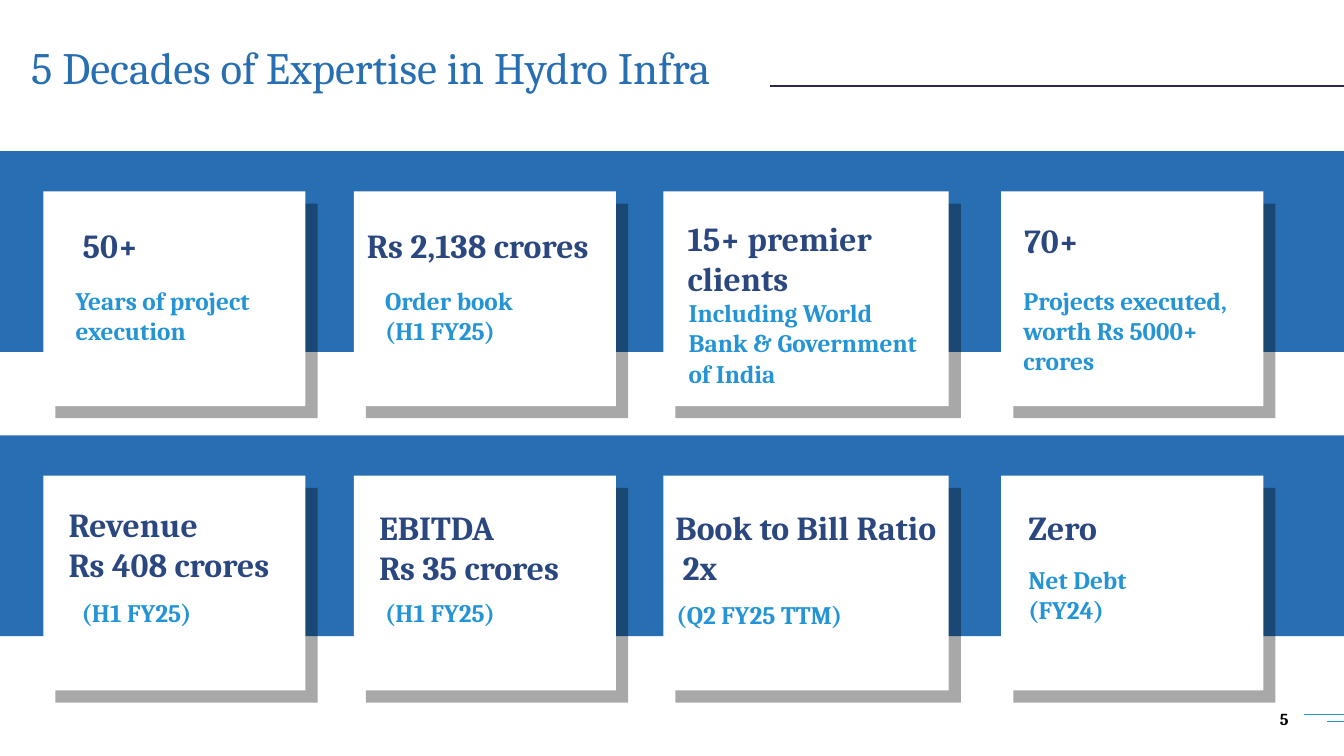
from lxml.etree import SubElement
from pptx import Presentation
from pptx.dml.color import RGBColor
from pptx.enum.shapes import MSO_CONNECTOR, MSO_SHAPE
from pptx.enum.text import MSO_ANCHOR, MSO_AUTO_SIZE, PP_ALIGN
from pptx.oxml.ns import qn
from pptx.util import Inches, Pt

COLORS = {"blue": "286EB2", "navy": "2B4780", "sky": "2494D5",
          "rule": "2C284B", "black": "000000", "white": "FFFFFF"}
FORMATS = {
    "title": {"size": Pt(32), "bold": False, "color": "blue"},
    "figure": {"size": Pt(24), "bold": True, "color": "navy"},
    "label": {"size": Pt(18), "bold": True, "color": "sky"},
    "number": {"size": Pt(12), "bold": True, "color": "black"},
}


def rgb(name):
    return RGBColor.from_string(COLORS[name])


class SlideBuilder:
    def __init__(self, slide, font="Cambria"):
        self.s = slide
        self.font = font

    def fill_text(self, tf, lines, style, align=PP_ALIGN.LEFT, inset=0):
        frame = {"word_wrap": True, "auto_size": MSO_AUTO_SIZE.NONE,
                 "margin_left": inset, "margin_right": inset,
                 "margin_top": 0, "margin_bottom": 0}
        for name, value in frame.items():
            setattr(tf, name, value)
        for i, line in enumerate(lines):
            p = tf.paragraphs[0] if i == 0 else tf.add_paragraph()
            p.alignment = align
            r = p.add_run()
            r.text = line
            r.font.name = self.font
            for name, value in FORMATS[style].items():
                if name == "color":
                    r.font.color.rgb = rgb(value)
                else:
                    setattr(r.font, name, value)

    def title(self, text, box):
        sp = self.s.shapes.title
        for name, value in zip(("left", "top", "width", "height"), box):
            setattr(sp, name, Inches(value))
        self.fill_text(sp.text_frame, [text], "title", inset=Inches(0.1))
        sp.text_frame.vertical_anchor = MSO_ANCHOR.MIDDLE
        sp.text_frame.paragraphs[0].line_spacing = 0.9

    def text(self, box, lines, style, **options):
        sp = self.s.shapes.add_textbox(*map(Inches, box))
        self.fill_text(sp.text_frame, lines, style, **options)
        return sp.text_frame

    def rect(self, box, color, alpha=None):
        sp = self.s.shapes.add_shape(MSO_SHAPE.RECTANGLE, *map(Inches, box))
        sp.shadow.inherit = False
        sp.fill.solid()
        sp.fill.fore_color.rgb = rgb(color)
        sp.line.fill.background()
        if alpha:
            clr = sp._element.spPr.find(".//" + qn("a:srgbClr"))
            SubElement(clr, qn("a:alpha"), val=str(alpha * 1000))

    def line(self, x1, x2, y, color, width):
        cn = self.s.shapes.add_connector(
            MSO_CONNECTOR.STRAIGHT, *map(Inches, (x1, y, x2, y)))
        cn.line.color.rgb = rgb(color)
        cn.line.width = Pt(width)
        SubElement(cn._element.spPr, qn("a:effectLst"))


WIDTH = 13.33
COLUMNS = [(0.43, 2.6), (3.51, 2.6), (6.58, 2.83), (9.93, 2.6)]
CARD_HEIGHT, SHADOW = 2.13, 0.12

# Each row: band top, then (figure box, figure lines, label box, label lines)
ROWS = [
    (1.5, [
        ((0.82, 2.23, 2.2, 0.4), ["50+"],
         (0.75, 2.83, 2.19, 0.61), ["Years of project execution"]),
        ((3.64, 2.23, 2.36, 0.4), ["Rs 2,138 crores"],
         (3.82, 2.83, 1.53, 0.62), ["Order book (H1 FY25)"]),
        ((6.82, 2.16, 2.56, 0.81), ["15+ premier clients"],
         (6.83, 2.95, 2.43, 0.91), ["Including World Bank & Government of India"]),
        ((10.16, 2.18, 2.3, 0.4), ["70+"],
         (10.15, 2.83, 2.16, 0.91), ["Projects executed, worth Rs 5000+ crores"]),
    ]),
    (4.32, [
        ((0.68, 5, 2.13, 0.81), ["Revenue", "Rs 408 crores"],
         (0.81, 5.93, 2.19, 0.3), ["(H1 FY25)"]),
        ((3.76, 5.03, 2.3, 0.81), ["EBITDA", "Rs 35 crores"],
         (3.82, 5.93, 1.87, 0.3), ["(H1 FY25)"]),
        ((6.7, 5.03, 2.67, 0.81), ["Book to Bill Ratio", "2x"],
         (6.71, 5.95, 1.87, 0.3), ["(Q2 FY25 TTM)"]),
        ((10.2, 5.03, 2.3, 0.4), ["Zero"],
         (10.2, 5.6, 1.96, 0.61), ["Net Debt", "(FY24)"]),
    ]),
]


def main():
    prs = Presentation()
    prs.slide_width, prs.slide_height = Inches(WIDTH), Inches(7.5)
    b = SlideBuilder(prs.slides.add_slide(prs.slide_layouts[5]))

    # Title and rule
    b.title("5 Decades of Expertise in Hydro Infra", (0.21, 0.42, 12.61, 0.55))
    b.line(7.64, WIDTH, 0.85, "rule", 1.5)

    # Bands with cards
    for band_top, cards in ROWS:
        b.rect((0, band_top, WIDTH, 1.99), "blue")
        top = band_top + 0.4
        for left, width in COLUMNS:
            b.rect((left + SHADOW, top + SHADOW, width, CARD_HEIGHT), "black", 34)
            b.rect((left, top, width, CARD_HEIGHT), "white")
        for figure_box, figure, label_box, label in cards:
            tf = b.text(figure_box, figure, "figure")
            if figure[-1] == "2x":  # slight indent under the ratio heading
                pPr = tf.paragraphs[-1]._p.get_or_add_pPr()
                pPr.set("marL", str(Inches(0.07)))
            b.text(label_box, label, "label")

    # Page number and corner lines
    tf = b.text((9.67, 6.91, 3.21, 0.44), ["5"], "number",
                align=PP_ALIGN.RIGHT, inset=Inches(0.1))
    tf.vertical_anchor = MSO_ANCHOR.MIDDLE
    for start, y in ((12.93, 7.09), (13.16, 7.16)):
        b.line(start, WIDTH, y, "sky", 0.5)

    prs.save("out.pptx")


if __name__ == "__main__":
    main()
